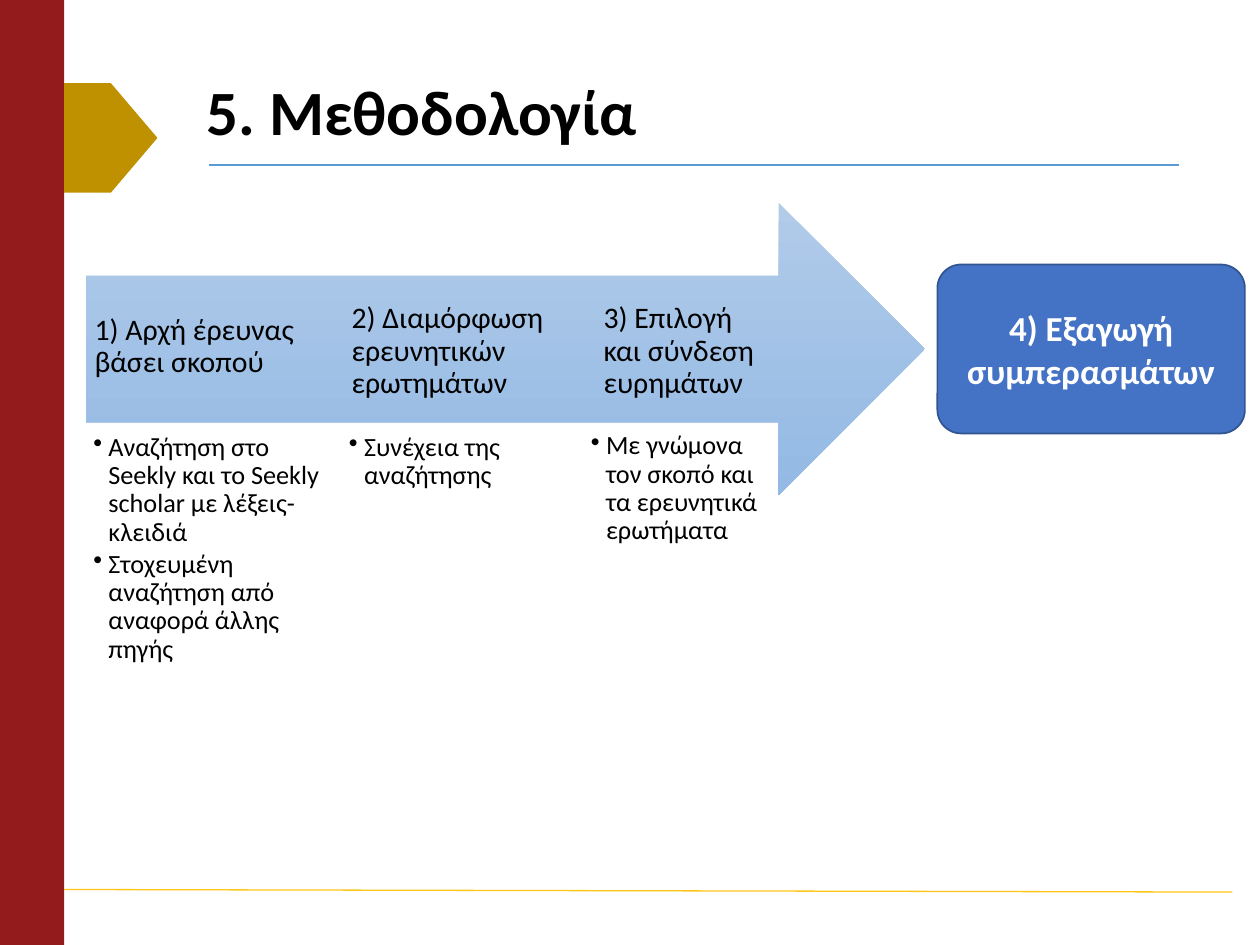
"""Build the methodology slide: three research steps on an arrow leading to a conclusion."""
from dataclasses import dataclass
from typing import NamedTuple

from lxml import etree
from pptx import Presentation
from pptx.dml.color import RGBColor
from pptx.enum.shapes import MSO_CONNECTOR, MSO_SHAPE
from pptx.enum.text import MSO_ANCHOR, PP_ALIGN
from pptx.oxml.ns import qn
from pptx.shapes.autoshape import Shape
from pptx.slide import Slide
from pptx.util import Inches, Pt

STRAIGHT = MSO_CONNECTOR.STRAIGHT
RECTANGLE, PENTAGON = MSO_SHAPE.RECTANGLE, MSO_SHAPE.PENTAGON
RIGHT_ARROW, ROUNDED = MSO_SHAPE.RIGHT_ARROW, MSO_SHAPE.ROUNDED_RECTANGLE
TOP, MIDDLE = MSO_ANCHOR.TOP, MSO_ANCHOR.MIDDLE
LEFT, CENTER = PP_ALIGN.LEFT, PP_ALIGN.CENTER

BLACK = RGBColor(0x00, 0x00, 0x00)
WHITE = RGBColor(0xFF, 0xFF, 0xFF)
RED = RGBColor(0x93, 0x1B, 0x1B)
OCHRE = RGBColor(0xBF, 0x90, 0x00)
YELLOW = RGBColor(0xFF, 0xC6, 0x1A)
SKY = RGBColor(0x5B, 0x9B, 0xD5)
ARROW_TOP = RGBColor(0xB1, 0xCB, 0xE9)
ARROW_BOTTOM = RGBColor(0x93, 0xB9, 0xE4)
BLUE = RGBColor(0x44, 0x72, 0xC4)
NAVY = RGBColor(0x32, 0x54, 0x91)

WIDTH, HEIGHT = Inches(10), Inches(7.5)
BULLET_INDENT = Inches(0.12)


class Area(NamedTuple):
    """Left, top, width and height as percentages of the slide."""
    left: float
    top: float
    width: float
    height: float


@dataclass(frozen=True)
class TextStyle:
    size: float
    color: RGBColor = BLACK
    bold: bool = False
    align: PP_ALIGN = LEFT
    anchor: MSO_ANCHOR = MIDDLE
    line_spacing: float = 0.9
    space_after: float = 0
    bulleted: bool = False
    side_inset: float = 0.1
    end_inset: float = 0.05


@dataclass(frozen=True)
class Step:
    heading: str
    heading_area: Area
    details: tuple[str, ...]
    details_area: Area


TITLE = TextStyle(36, bold=True)
HEADING = TextStyle(17, side_inset=0, end_inset=0.19)
DETAIL = TextStyle(15, anchor=TOP, space_after=2, bulleted=True, side_inset=0, end_inset=0)
CONCLUSION = TextStyle(20, WHITE, bold=True, align=CENTER, line_spacing=1)

STEPS = (
    Step("1) Αρχή έρευνας βάσει σκοπού", Area(7.5, 28, 18.1, 17.33),
         ("Αναζήτηση στο Seekly και το Seekly scholar με λέξεις-κλειδιά",
          "Στοχευμένη αναζήτηση από αναφορά άλλης πηγής"),
         Area(7.4, 45.87, 19.1, 24.13)),
    Step("2) Διαμόρφωση ερευνητικών ερωτημάτων", Area(27.9, 28.53, 17.4, 17.33),
         ("Συνέχεια της αναζήτησης",), Area(27.7, 45.87, 15.3, 23.73)),
    Step("3) Επιλογή και σύνδεση ευρημάτων", Area(47.9, 28.53, 13.7, 17.33),
         ("Με γνώμονα τον σκοπό και τα ερευνητικά ερωτήματα",),
         Area(46.9, 45.73, 14.4, 23.2)),
)


def across(share: float) -> int:
    return round(WIDTH * share / 100)


def down(share: float) -> int:
    return round(HEIGHT * share / 100)


def place(area: Area) -> tuple[int, int, int, int]:
    return across(area.left), down(area.top), across(area.width), down(area.height)


def write(shape: Shape, lines: tuple[str, ...], style: TextStyle) -> None:
    frame = shape.text_frame
    frame.word_wrap = True
    frame.vertical_anchor = style.anchor
    frame.margin_left = frame.margin_right = Inches(style.side_inset)
    frame.margin_top = frame.margin_bottom = Inches(style.end_inset)
    frame.text = "\n".join(lines)
    for paragraph in frame.paragraphs:
        paragraph.alignment = style.align
        paragraph.line_spacing = style.line_spacing
        paragraph.space_after = Pt(style.space_after)
        if style.bulleted:
            properties = paragraph._p.get_or_add_pPr()
            properties.set("marL", str(BULLET_INDENT))
            properties.set("indent", str(-BULLET_INDENT))
            etree.SubElement(properties, qn("a:buChar")).set("char", "•")
        font = paragraph.font
        font.name, font.size, font.bold = "Calibri", Pt(style.size), style.bold
        font.color.rgb = style.color


def add_text(slide: Slide, area: Area, lines: tuple[str, ...], style: TextStyle) -> None:
    write(slide.shapes.add_textbox(*place(area)), lines, style)


def add_block(slide: Slide, kind: MSO_SHAPE, area: Area, color: RGBColor) -> Shape:
    block = slide.shapes.add_shape(kind, *place(area))
    block.shadow.inherit = False
    block.fill.solid()
    block.fill.fore_color.rgb = color
    block.line.fill.background()
    return block


def add_rule(slide: Slide, start: tuple[float, float], end: tuple[float, float],
             color: RGBColor) -> None:
    rule = slide.shapes.add_connector(
        STRAIGHT, across(start[0]), down(start[1]), across(end[0]), down(end[1]))
    rule.line.color.rgb = color
    rule.line.width = Pt(0.75)
    etree.SubElement(rule._element.spPr, qn("a:effectLst"))


def add_process_arrow(slide: Slide, area: Area) -> None:
    arrow = add_block(slide, RIGHT_ARROW, area, ARROW_TOP)
    arrow.fill.gradient()
    arrow.fill.gradient_angle = 270
    for stop, color in zip(arrow.fill.gradient_stops, (ARROW_TOP, ARROW_BOTTOM)):
        stop.color.rgb = color


def add_conclusion(slide: Slide, area: Area, text: str) -> None:
    conclusion = add_block(slide, ROUNDED, area, BLUE)
    conclusion.adjustments[0] = 0.14
    conclusion.line.color.rgb = NAVY
    conclusion.line.width = Pt(1)
    write(conclusion, (text,), CONCLUSION)


def main() -> None:
    presentation = Presentation()
    presentation.slide_width, presentation.slide_height = WIDTH, HEIGHT
    slide = presentation.slides.add_slide(presentation.slide_layouts[6])

    add_block(slide, RECTANGLE, Area(0, 0, 5.1, 100), RED)
    add_rule(slide, (16.6, 17.47), (93.6, 17.47), SKY)
    add_rule(slide, (5.1, 94.13), (97.8, 94.4), YELLOW)
    add_block(slide, PENTAGON, Area(5.1, 8.8, 7.4, 11.6), OCHRE)
    add_text(slide, Area(15.4, 8, 78.7, 8.4), ("5. Μεθοδολογία",), TITLE)

    add_process_arrow(slide, Area(6.8, 21.47, 66.6, 30.93))
    for step in STEPS:
        add_text(slide, step.heading_area, (step.heading,), HEADING)
        add_text(slide, step.details_area, step.details, DETAIL)
    add_conclusion(slide, Area(74.4, 28, 24.4, 17.87), "4) Εξαγωγή συμπερασμάτων")

    presentation.save("out.pptx")


if __name__ == "__main__":
    main()
